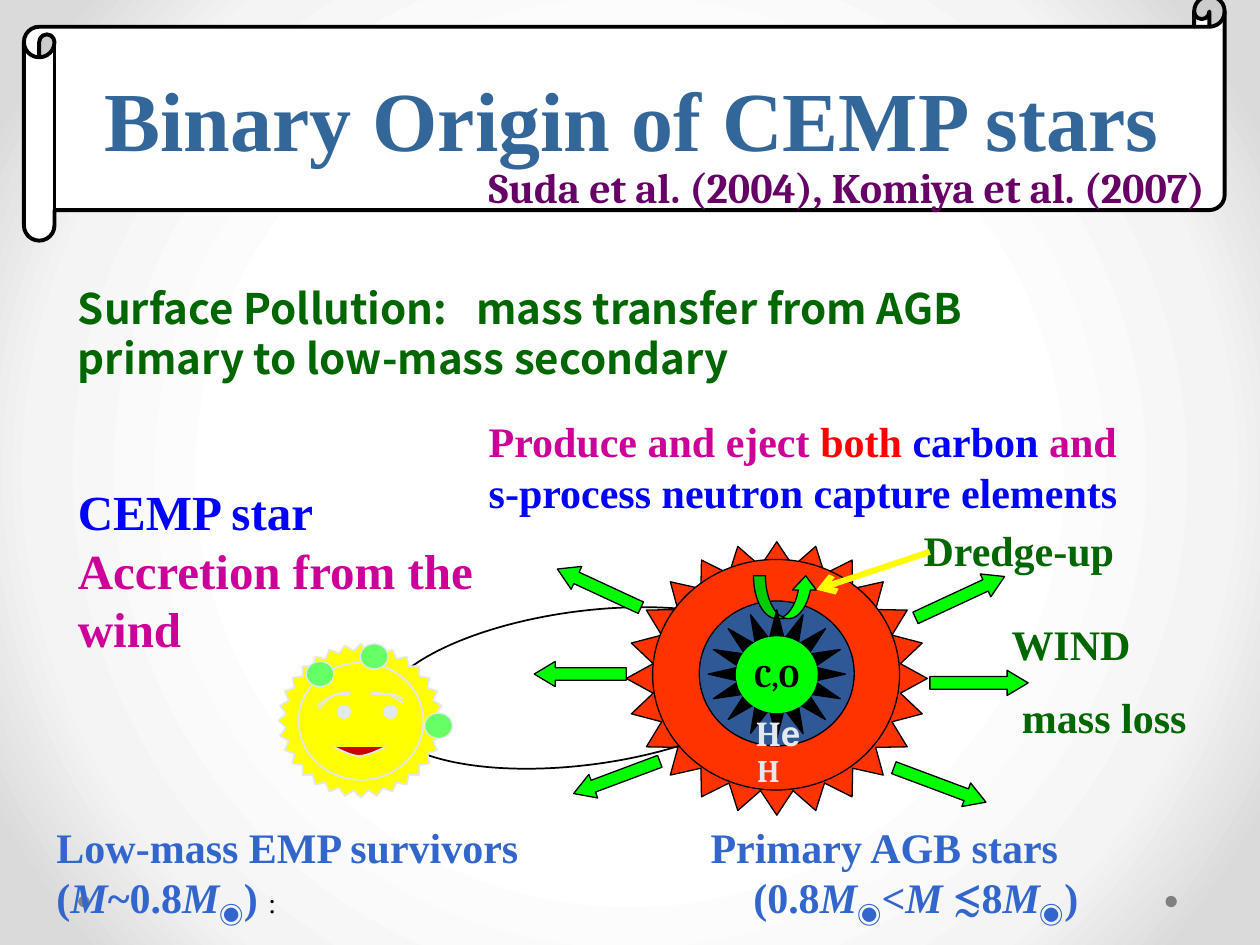
from pptx import Presentation, oxml, util as u
from pptx.dml.color import RGBColor
from pptx.enum import shapes, text
from pptx.oxml import ns

SHAPE = shapes.MSO_SHAPE
ANCHOR = text.MSO_ANCHOR
ALIGN = text.PP_ALIGN
TIMES, CAMBRIA, NOTO = "Times New Roman", "Cambria", "Noto Sans CJK JP"
BLACK = RGBColor(0x00, 0x00, 0x00)
WHITE = RGBColor(0xFF, 0xFF, 0xFF)
GREY = RGBColor(0x80, 0x80, 0x80)
PALE = RGBColor(0xE4, 0xE9, 0xEF)
YELLOW = RGBColor(0xFF, 0xFF, 0x00)
RED = RGBColor(0xFF, 0x00, 0x00)
LIP_RED = RGBColor(0xCC, 0x00, 0x00)
STAR_RED = RGBColor(0xFF, 0x33, 0x00)
LIME = RGBColor(0x00, 0xFF, 0x00)
MINT = RGBColor(0x66, 0xFF, 0x66)
GREEN = RGBColor(0x00, 0x66, 0x00)
NAVY = RGBColor(0x2F, 0x58, 0x97)
STEEL = RGBColor(0x33, 0x66, 0x99)
AZURE = RGBColor(0x33, 0x66, 0xCC)
BLUE = RGBColor(0x00, 0x00, 0xFF)
MAGENTA = RGBColor(0xCC, 0x00, 0x99)
PURPLE = RGBColor(0x66, 0x00, 0x66)
ITALIC = {"italic": True}
SUN = ("◉", {"name": NOTO, "sub": True})


def paint_background(page):
    """Give the page a radial gradient from white to grey."""
    stops = "".join(f'<a:gs pos="{pos}000"><a:srgbClr val="{color}"/></a:gs>'
                    for pos, color in ((50, "FFFFFF"), (76, "F4F4F4"), (92, "DADADA")))
    page._element.cSld.insert(0, oxml.parse_xml(
        f'<p:bg {ns.nsdecls("p", "a")}><p:bgPr><a:gradFill><a:gsLst>{stops}</a:gsLst>'
        '<a:path path="circle"><a:fillToRect l="50000" t="50000" r="50000" b="50000"/></a:path>'
        '</a:gradFill><a:effectLst/></p:bgPr></p:bg>'))


def style(shape, fill, line, width):
    """Set fill and outline, where None means absent."""
    shape.shadow.inherit = False
    if fill is None:
        shape.fill.background()
    else:
        shape.fill.solid()
        shape.fill.fore_color.rgb = fill
    if line is None:
        shape.line.fill.background()
    else:
        shape.line.color.rgb = line
        shape.line.width = u.Pt(width)


def add_preset(page, kind, place, fill, line=BLACK, width=0.75, adjust=(), turn=0):
    """Add a preset shape at left, top, width, height."""
    shape = page.shapes.add_shape(kind, *map(u.Inches, place))
    for index, value in enumerate(adjust):
        shape.adjustments[index] = value
    shape.rotation = turn
    style(shape, fill, line, width)
    return shape


def add_curve(page, points, fill=None):
    """Draw a chain of cubic curves through the given control points."""
    steps = 8
    trail = [points[0]]
    for first in range(0, len(points) - 1, 3):
        a, b, c, d = points[first:first + 4]
        for step in range(1, steps + 1):
            t = step / steps
            s = 1 - t
            trail.append(tuple(s**3 * a[i] + 3 * s * s * t * b[i] + 3 * s * t * t * c[i] + t**3 * d[i]
                               for i in (0, 1)))
    start, *rest = [(u.Inches(x), u.Inches(y)) for x, y in trail]
    builder = page.shapes.build_freeform(*start)
    builder.add_line_segments(rest, close=False)
    style(builder.convert_to_shape(), fill, PALE, 1)


def write(shape, paragraphs, size, color, name=TIMES, align=ALIGN.LEFT,
          anchor=ANCHOR.TOP, wrap=True, gap=0):
    """Fill a shape with bold paragraphs made of (text, changes) spans."""
    frame = shape.text_frame
    frame.word_wrap = wrap
    frame.vertical_anchor = anchor
    for index, spans in enumerate(paragraphs):
        para = frame.add_paragraph() if index else frame.paragraphs[0]
        para.alignment = align
        if index and gap:
            para.space_before = u.Pt(gap)
        font = para.font
        font.size, font.bold, font.name = u.Pt(size), True, name
        font.color.rgb = color
        for words, changes in spans:
            span = para.add_run()
            span.text = words
            font = span.font
            font.size = u.Pt(changes.get("size", size))
            font.bold = changes.get("bold", True)
            font.italic = changes.get("italic", False)
            font.name = changes.get("name", name)
            font.color.rgb = changes.get("color", color)
            if changes.get("sub"):
                properties = span._r.get_or_add_rPr()
                properties.set("baseline", "-25000")
                properties.append(oxml.parse_xml(
                    f'<a:ea {ns.nsdecls("a")} typeface="{font.name}"/>'))


def add_label(page, place, paragraphs, size, color, **options):
    """Add a text box and write in it."""
    box = page.shapes.add_textbox(*map(u.Inches, place))
    write(box, paragraphs, size, color, **options)
    return box


def draw_primary(page):
    """Draw the outer layers of the AGB star and the transfer orbit."""
    add_preset(page, SHAPE.STAR_24_POINT, (4.97, 4.3, 2.39, 2.17), STAR_RED, adjust=[0.414])
    add_preset(page, SHAPE.OVAL, (3.01, 4.85, 3.26, 1.22), None, width=1, turn=352.5)
    add_preset(page, SHAPE.OVAL, (5.18, 4.44, 1.96, 1.83), STAR_RED)
    add_preset(page, SHAPE.OVAL, (5.55, 4.77, 1.23, 1.15), NAVY)


def draw_secondary(page):
    """Draw the smiling low-mass star."""
    add_preset(page, SHAPE.STAR_32_POINT, (2.21, 5.11, 1.31, 1.22), YELLOW, PALE, 1, [0.457])
    add_preset(page, SHAPE.OVAL, (2.37, 5.26, 0.99, 0.93), YELLOW, PALE, 1)
    add_curve(page, [(2.65, 5.93), (2.72, 5.96), (2.79, 6), (2.85, 6),
                     (2.92, 6), (3.03, 5.94), (3.06, 5.93)], LIP_RED)
    brows = (
        [(2.78, 5.52), (2.74, 5.51), (2.7, 5.5), (2.65, 5.52), (2.61, 5.53), (2.57, 5.57), (2.52, 5.6)],
        [(2.78, 5.5), (2.73, 5.5), (2.69, 5.5), (2.65, 5.52), (2.61, 5.54), (2.57, 5.58), (2.53, 5.63)],
        [(2.94, 5.51), (2.95, 5.51), (2.97, 5.51), (2.99, 5.51), (3.02, 5.51), (3.06, 5.5),
         (3.1, 5.51), (3.13, 5.51), (3.17, 5.53), (3.2, 5.55)],
        [(2.95, 5.5), (2.96, 5.5), (2.97, 5.5), (3, 5.5), (3.02, 5.51), (3.07, 5.5),
         (3.1, 5.52), (3.13, 5.53), (3.17, 5.56), (3.2, 5.58)])
    for brow in brows:
        add_curve(page, brow)
    for left in (2.68, 3.05):
        add_preset(page, SHAPE.OVAL, (left, 5.6, 0.1, 0.1), PALE, PALE, 1)


def draw_wind(page):
    """Draw the dredge-up arrow, the wind arrows and the accreted blobs."""
    add_preset(page, SHAPE.CURVED_UP_ARROW, (5.98, 4.57, 0.51, 0.34), LIME, adjust=[0.28, 0.56, 0.333])
    for kind, width, arrows in (
            (SHAPE.RIGHT_ARROW, 0.78, ((7.23, 4.64, 335.1), (7.38, 5.32, 0), (7.07, 6.13, 20.5))),
            (SHAPE.LEFT_ARROW, 0.73, ((4.39, 4.57, 24.9), (4.24, 5.25, 0), (4.53, 6.07, 339.5)))):
        for left, top, turn in arrows:
            add_preset(page, kind, (left, top, width, 0.2), LIME, adjust=[0.5, 0.833], turn=turn)
    for left, top in ((2.43, 5.25), (3.37, 5.66), (2.86, 5.11)):
        add_preset(page, SHAPE.OVAL, (left, top, 0.22, 0.2), MINT, PALE)


def draw_core(page):
    """Draw the burning core and name the layers."""
    add_preset(page, SHAPE.STAR_16_POINT, (5.62, 4.84, 1.09, 1.02), BLACK, adjust=[0.28])
    core = add_preset(page, SHAPE.OVAL, (5.84, 5.05, 0.65, 0.61), LIME, None)
    write(core, [[("C,O", {})]], 18, BLACK, CAMBRIA, ALIGN.CENTER, ANCHOR.MIDDLE, False)
    add_label(page, (5.91, 5.91, 0.58, 0.4), [[("H", {})]], 18, PALE, name=CAMBRIA)
    add_label(page, (5.9, 5.6, 0.77, 0.44), [[("H", {}), ("e", {"name": "Arial"})]],
              20, PALE, name=CAMBRIA)


def add_captions(page):
    """Write the captions around the two stars."""
    add_label(page, (0.35, 6.47, 4.4, 0.91), [[
        ("Low-mass EMP survivors (", {}), ("M", ITALIC), ("~0.8", {}), ("M", ITALIC), SUN,
        (") ", {}), (":", {"size": 16, "color": BLACK, "bold": False})]], 24, AZURE)
    primary = add_label(page, (4.64, 6.47, 4.84, 0.91), [
        [("Primary AGB stars ", {})],
        [("(0.8", {}), ("M", ITALIC), SUN, ("<", {}), ("M ", ITALIC), ("≲8", {}),
         ("M", ITALIC), SUN, (") ", {})]], 24, AZURE, align=ALIGN.CENTER)
    limits = primary.text_frame.paragraphs[1]
    limits.level = 1
    limits._p.get_or_add_pPr().set("marL", str(u.Inches(0.5)))
    add_label(page, (0.52, 2.19, 8.54, 0.91), [[
        ("Surface Pollution:   mass transfer from AGB primary to low-mass secondary", {})]],
        24, GREEN, name=NOTO)
    add_label(page, (7.93, 4.86, 1.8, 1.11), [[("WIND", {})], [(" mass loss", {})]], 24, GREEN, gap=13)
    add_label(page, (7.09, 4.11, 1.85, 0.5), [[(" ", {"size": 20}), ("Dredge-up", {})]],
              24, GREEN, align=ALIGN.RIGHT)
    add_label(page, (0.52, 3.77, 3.4, 1.99), [
        [("CEMP star", {"color": BLUE})], [("Accretion from the wind", {})]], 28, MAGENTA)


def add_pointer(page):
    """Point from the dredge-up label to the curved arrow."""
    pointer = page.shapes.add_connector(
        shapes.MSO_CONNECTOR.STRAIGHT, *map(u.Inches, (7.38, 4.38, 6.48, 4.68)))
    pointer.line.color.rgb = YELLOW
    pointer.line.width = u.Pt(3.5)
    pointer.line._get_or_add_ln().append(oxml.parse_xml(f'<a:tailEnd {ns.nsdecls("a")} type="arrow"/>'))
    pointer._element.spPr.append(oxml.parse_xml(f'<a:effectLst {ns.nsdecls("a")}/>'))


def main():
    """Build the slide and save it."""
    deck = Presentation()
    deck.slide_width, deck.slide_height = u.Inches(10), u.Inches(7.5)
    page = deck.slides.add_slide(deck.slide_layouts[6])
    paint_background(page)
    for left in (9.25, 0.62):
        add_preset(page, SHAPE.OVAL, (left, 7.11, 0.09, 0.09), GREY, None)
    draw_primary(page)
    draw_secondary(page)
    draw_wind(page)
    draw_core(page)
    add_captions(page)
    banner = add_preset(page, SHAPE.HORIZONTAL_SCROLL, (0.19, -0.03, 9.53, 1.94), WHITE, width=2.25)
    write(banner, [[("Binary Origin of CEMP stars", {})]], 48, STEEL,
          align=ALIGN.CENTER, anchor=ANCHOR.MIDDLE)
    add_label(page, (3.78, 3.25, 5.48, 0.91), [[
        ("Produce and eject ", {}), ("both ", {"color": RED}), ("carbon", {"color": BLUE}),
        (" and ", {}), ("s-process neutron capture elements", {"color": BLUE})]], 24, MAGENTA)
    add_pointer(page)
    add_label(page, (3.78, 1.23, 6.08, 0.5), [[("Suda et al. (2004), Komiya et al. (2007)", {})]],
              24, PURPLE, name=CAMBRIA)
    deck.save("out.pptx")


if __name__ == "__main__":
    main()
